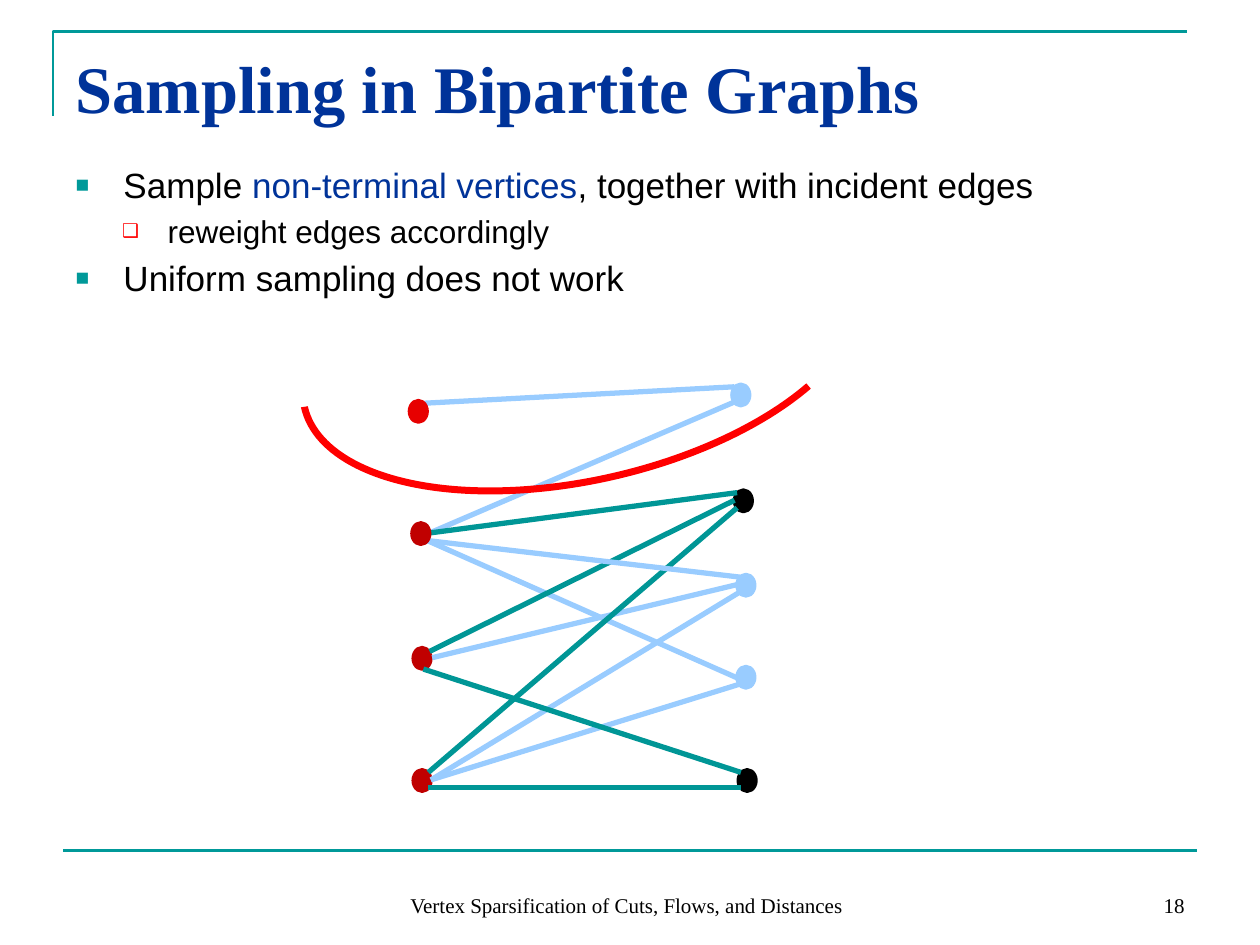
import pptx
import pptx.util
import pptx.dml.color
import pptx.oxml.ns
import pptx.enum.shapes
import pptx.enum.text
from lxml import etree

Inches = pptx.util.Inches
Pt = pptx.util.Pt
qn = pptx.oxml.ns.qn
ALIGN = pptx.enum.text.PP_ALIGN
ANCHOR = pptx.enum.text.MSO_ANCHOR
SHAPE = pptx.enum.shapes.MSO_SHAPE
COLORS = {"teal": "009999", "edge": "009696", "navy": "003399", "black": "000000",
          "light": "99CCFF", "terminal": "C00000", "bright": "E70000", "red": "FF0000"}


def color(name):
    return pptx.dml.color.RGBColor.from_string(COLORS[name])


def add_line(start, end, line_color, width):
    connector = slide.shapes.add_connector(
        pptx.enum.shapes.MSO_CONNECTOR.STRAIGHT, *map(Inches, start + end))
    connector.line.color.rgb = color(line_color)
    connector.line.width = Pt(width)
    etree.SubElement(connector._element.spPr, qn("a:effectLst"))


presentation = pptx.Presentation()
presentation.slide_width, presentation.slide_height = Inches(10), Inches(7.5)
slide = presentation.slides.add_slide(presentation.slide_layouts[1])

# Frame: corner rule above, straight rule below
builder = slide.shapes.build_freeform(Inches(0.42), Inches(0.92))
builder.add_line_segments([(Inches(0.42), Inches(0.25)), (Inches(9.42), Inches(0.25))], close=False)
corner = builder.convert_to_shape()
corner.shadow.inherit = False
corner.fill.background()
corner.line.color.rgb = color("teal")
corner.line.width = Pt(1.5)
add_line((0.5, 6.75), (9.5, 6.75), "teal", 1.5)

# Title and body positions
title, body = slide.shapes.title, slide.placeholders[1]
for placeholder, box, anchor in ((title, (0.5, 0.3, 9, 0.78), ANCHOR.MIDDLE),
                                 (body, (0.5, 1.25, 9, 5.45), ANCHOR.TOP)):
    placeholder.left, placeholder.top, placeholder.width, placeholder.height = map(Inches, box)
    placeholder.text_frame.auto_size = pptx.enum.text.MSO_AUTO_SIZE.NONE
    placeholder.text_frame.vertical_anchor = anchor

# Title
paragraph = title.text_frame.paragraphs[0]
paragraph.alignment = ALIGN.LEFT
run = paragraph.add_run()
run.text = "Sampling in Bipartite Graphs"
for name, value in {"size": Pt(38), "name": "Times New Roman", "bold": True}.items():
    setattr(run.font, name, value)
run.font.color.rgb = color("navy")

# Bulleted list
levels = [{"size": 20, "margin": 0.38, "indent": -0.38, "bullet": "■", "color": "teal", "scale": 65},
          {"size": 18, "margin": 0.73, "indent": -0.36, "bullet": "❑", "color": "red", "scale": 60}]
items = [(0, [("Sample ", "black"), ("non-terminal vertices", "navy"),
              (", together with incident edges", "black")]),
         (1, [("reweight edges accordingly", "black")]),
         (0, [("Uniform sampling does not work", "black")])]
for index, (level, runs) in enumerate(items):
    frame = body.text_frame
    paragraph = frame.add_paragraph() if index else frame.paragraphs[0]
    style = levels[level]
    paragraph.level = level
    paragraph.space_before = Pt(0.2 * style["size"])
    properties = paragraph._p.get_or_add_pPr()
    properties.set("marL", str(Inches(style["margin"])))
    properties.set("indent", str(Inches(style["indent"])))
    bullet_color = etree.SubElement(properties, qn("a:buClr"))
    etree.SubElement(bullet_color, qn("a:srgbClr"), val=COLORS[style["color"]])
    etree.SubElement(properties, qn("a:buSzPct"), val=str(style["scale"] * 1000))
    etree.SubElement(properties, qn("a:buChar"), char=style["bullet"])
    for text, text_color in runs:
        run = paragraph.add_run()
        run.text = text
        run.font.name, run.font.size = "Arial", Pt(style["size"])
        run.font.color.rgb = color(text_color)

# Bipartite graph: layers from back to front, each with vertices and then edges
layers = [
    ([(3.28, 5.14, "terminal"), (3.28, 6.11, "terminal"), (5.85, 5.29, "light")],
     [((3.39, 4.29), (5.85, 5.38), "light"),
      ((3.42, 6.19), (5.87, 4.7), "light"),
      ((3.42, 6.19), (5.87, 5.43), "light")]),
    ([(5.83, 3.89, "black"), (5.81, 3.05, "light"), (5.85, 4.56, "light"), (5.86, 6.11, "black")],
     [((3.43, 5.22), (5.85, 4.64), "light"),
      ((3.41, 5.17), (5.83, 3.97), "edge"),
      ((3.4, 6.13), (5.85, 4.03), "edge"),
      ((3.41, 4.23), (5.83, 3.19), "light"),
      ((3.41, 4.23), (5.85, 3.91), "edge"),
      ((3.36, 5.31), (5.88, 6.13), "edge"),
      ((3.37, 3.2), (5.83, 3.07), "light"),
      ((3.4, 6.25), (5.88, 6.25), "edge"),
      ((3.39, 4.29), (5.87, 4.58), "light")]),
    ([(3.25, 3.18, "bright"), (3.27, 4.15, "terminal")], []),
]
for vertices, edges in layers:
    for left, top, vertex_color in vertices:
        vertex = slide.shapes.add_shape(
            SHAPE.OVAL, Inches(left), Inches(top), Inches(0.14), Inches(0.17))
        vertex.shadow.inherit = False
        vertex.fill.solid()
        vertex.fill.fore_color.rgb = color(vertex_color)
        vertex.line.color.rgb = color(vertex_color)
        vertex.line.width = Pt(2)
    for start, end, edge_color in edges:
        add_line(start, end, edge_color, 3)

# Cut through the graph
cut = slide.shapes.add_shape(SHAPE.ARC, Inches(2.36), Inches(1.65), Inches(4.52), Inches(2.16))
cut.adjustments[0], cut.adjustments[1] = 121.98, 0.04
cut.rotation = 167.2
cut.shadow.inherit = False
cut.fill.background()
cut.line.color.rgb = color("red")
cut.line.width = Pt(4)

# Footer and slide number
for left, width, alignment, text in (
        (2.61, 4.73, ALIGN.CENTER, "Vertex Sparsification of Cuts, Flows, and Distances"),
        (7.17, 2.33, ALIGN.RIGHT, "18")):
    footer = slide.shapes.add_textbox(Inches(left), Inches(6.83), Inches(width), Inches(0.5))
    footer.text_frame.word_wrap = True
    footer.text_frame.vertical_anchor = ANCHOR.BOTTOM
    paragraph = footer.text_frame.paragraphs[0]
    paragraph.alignment = alignment
    run = paragraph.add_run()
    run.text = text
    run.font.name, run.font.size = "Times New Roman", Pt(12)
    run.font.color.rgb = color("black")

presentation.save("out.pptx")
